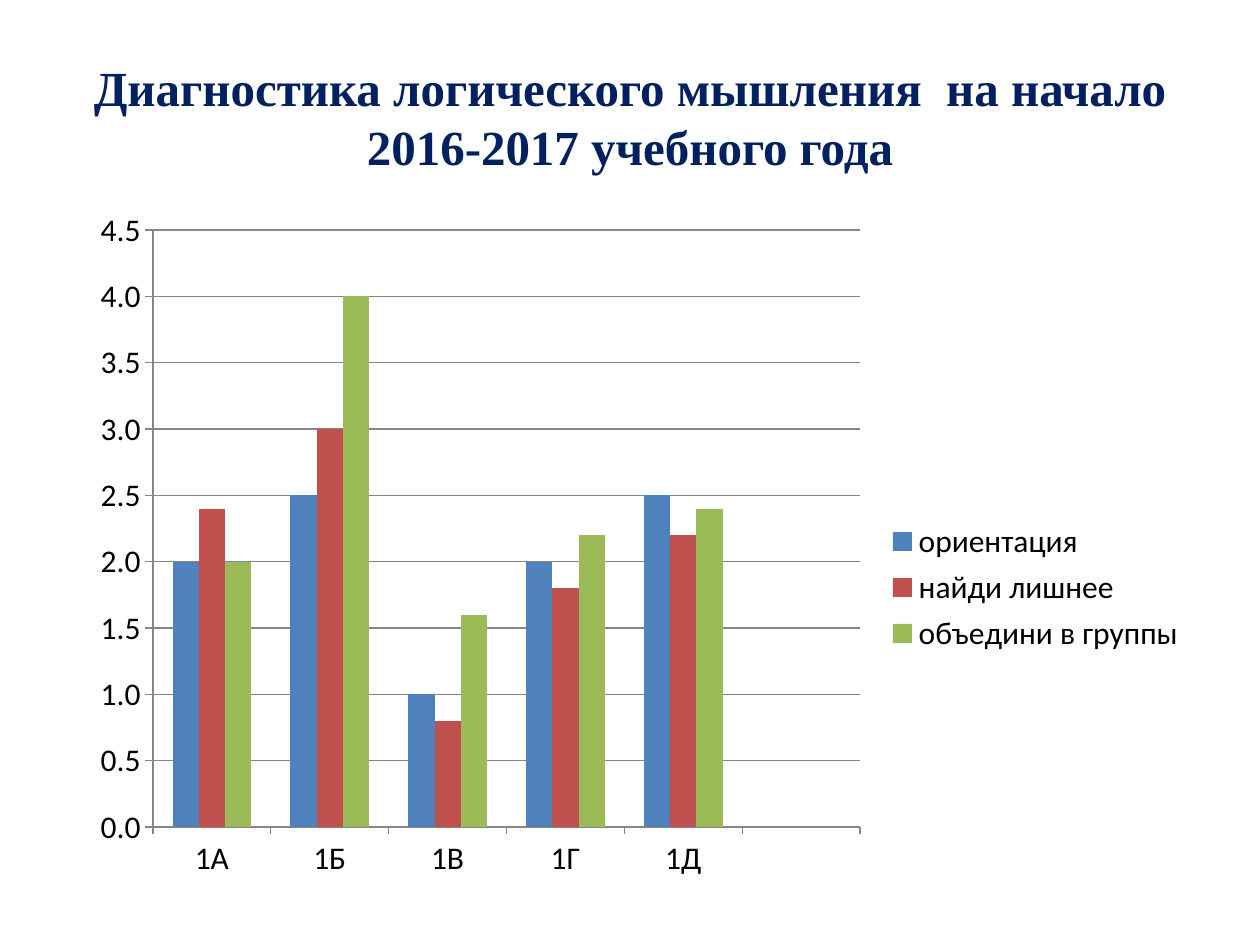
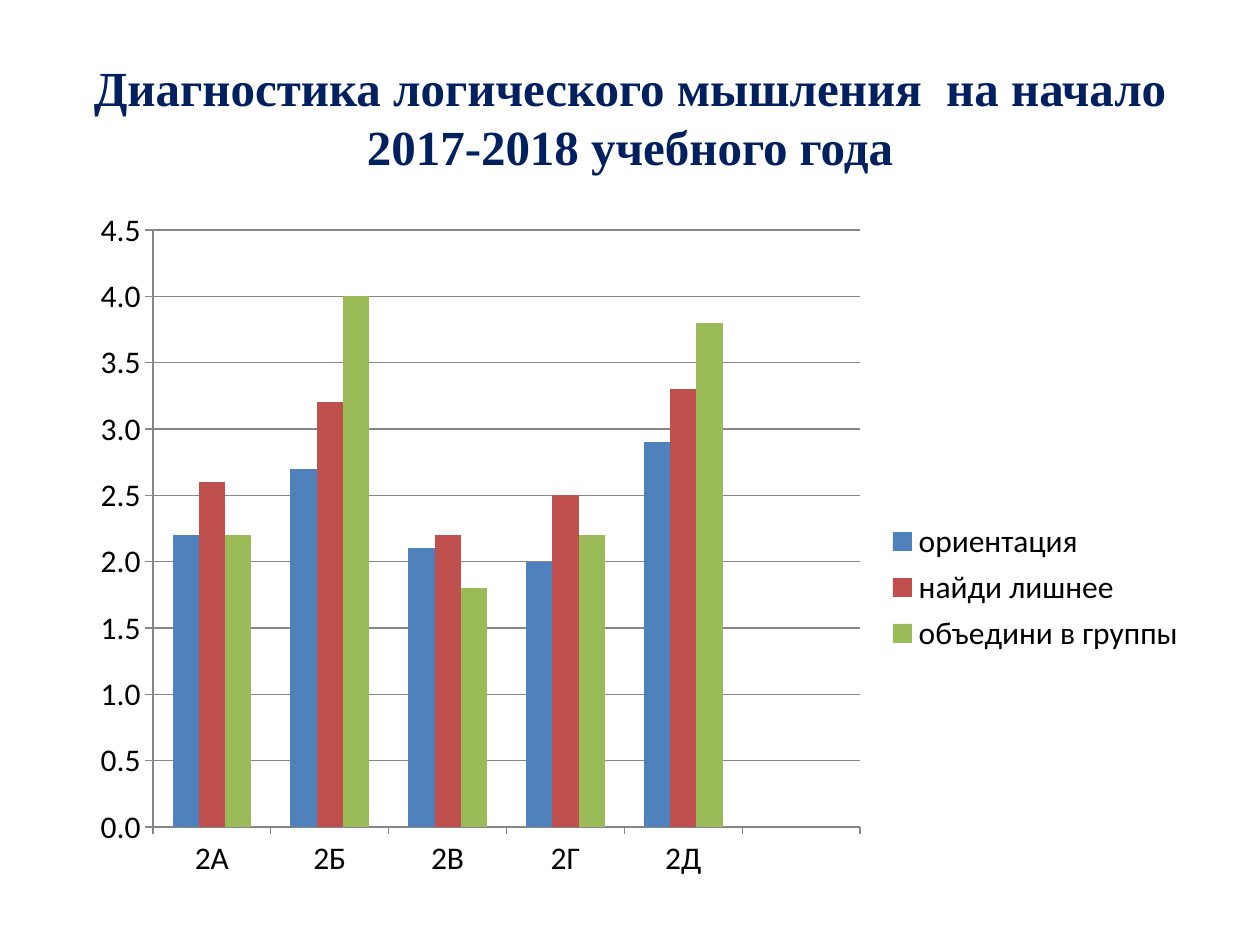
from pptx import Presentation
from pptx.chart.data import CategoryChartData
from pptx.dml.color import RGBColor
from pptx.enum.chart import XL_CHART_TYPE as ChartType, XL_LEGEND_POSITION as LegendPosition
from pptx.enum.chart import XL_TICK_MARK as TickMark
from pptx.enum.text import MSO_ANCHOR as Anchor, PP_ALIGN as Align
from pptx.oxml import parse_xml
from pptx.oxml.ns import nsdecls
from pptx.util import Inches, Pt

# Content: the last category is left empty on both slides
TITLE = "Диагностика логического мышления  на начало {} учебного года"
TESTS = ["ориентация", "найди лишнее", "объедини в группы"]
YEARS = [
    ("2016-2017", ["1А", "1Б", "1В", "1Г", "1Д", ""], [
        (2, 2.5, 1, 2, 2.5, None),
        (2.4, 3, 0.8, 1.8, 2.2, None),
        (2, 4, 1.6, 2.2, 2.4, None),
    ]),
    ("2017-2018", ["2А", "2Б", "2В", "2Г", "2Д", ""], [
        (2.2, 2.7, 2.1, 2, 2.9, None),
        (2.6, 3.2, 2.2, 2.5, 3.3, None),
        (2.2, 4, 1.8, 2.2, 3.8, None),
    ]),
]

# Shared style
NAVY = RGBColor(0x00, 0x20, 0x60)
BLACK = RGBColor(0x00, 0x00, 0x00)
GRAY = RGBColor(0x86, 0x86, 0x86)
TEST_COLORS = [
    RGBColor(0x4F, 0x81, 0xBD),
    RGBColor(0xC0, 0x50, 0x4D),
    RGBColor(0x9B, 0xBB, 0x59),
]
TITLE_BOX = [Inches(n) for n in (0.5, 0.3, 9, 1.25)]
CHART_BOX = [Inches(n) for n in (0.59, 1.55, 8.91, 5.51)]

# Left, top, width and height as shares of the chart
PLOT_AREA = (0.07, 0.05, 0.63, 0.86)
LEGEND_AREA = (0.73, 0.46, 0.26, 0.21)


def layout_xml(area, inner=False):
    target = '<c:layoutTarget val="inner"/>' if inner else ""
    modes = '<c:xMode val="edge"/><c:yMode val="edge"/>'
    sizes = "".join(f'<c:{side} val="{share}"/>' for side, share in zip("xywh", area))
    return parse_xml(
        f'<c:layout {nsdecls("c")}><c:manualLayout>{target}{modes}{sizes}'
        "</c:manualLayout></c:layout>"
    )


def place_parts(chart):
    plot_area = chart.plots[0]._element.getparent()
    legend = chart.legend._element
    for parent in (plot_area, legend):
        for layout in parent.xpath("c:layout"):
            parent.remove(layout)
    plot_area.insert(0, layout_xml(PLOT_AREA, inner=True))
    legend.xpath("c:legendPos")[0].addnext(layout_xml(LEGEND_AREA))


def add_title(slide, text):
    title = slide.shapes.title
    title.left, title.top, title.width, title.height = TITLE_BOX
    frame = title.text_frame
    frame.vertical_anchor = Anchor.MIDDLE
    frame.word_wrap = True
    paragraph = frame.paragraphs[0]
    paragraph.alignment = Align.CENTER
    run = paragraph.add_run()
    run.text = text
    run.font.name = "Times New Roman"
    run.font.size = Pt(28)
    run.font.bold = True
    run.font.color.rgb = NAVY


def add_scores_chart(slide, classes, scores):
    data = CategoryChartData(number_format="General")
    data.categories = classes
    for test, values in zip(TESTS, scores):
        data.add_series(test, values)
    chart = slide.shapes.add_chart(ChartType.COLUMN_CLUSTERED, *CHART_BOX, data).chart
    chart.has_title = False
    chart.font.name = "Calibri"
    chart.font.size = Pt(18)
    chart.font.color.rgb = BLACK

    # Columns
    plot = chart.plots[0]
    plot.gap_width = 150
    plot.overlap = 0
    plot.vary_by_categories = False
    for series, color in zip(plot.series, TEST_COLORS):
        series.format.fill.solid()
        series.format.fill.fore_color.rgb = color

    # Axes and gridlines
    value_axis = chart.value_axis
    value_axis.minimum_scale = 0
    value_axis.maximum_scale = 4.5
    value_axis.major_unit = 0.5
    value_axis.has_major_gridlines = True
    value_axis.tick_labels.number_format = "0.0"
    value_axis.tick_labels.number_format_is_linked = False
    for axis in (value_axis, chart.category_axis):
        axis.major_tick_mark = TickMark.OUTSIDE
        axis.minor_tick_mark = TickMark.NONE
    for part in (value_axis, chart.category_axis, value_axis.major_gridlines):
        part.format.line.color.rgb = GRAY
        part.format.line.width = Pt(0.75)

    # Legend
    chart.has_legend = True
    chart.legend.position = LegendPosition.RIGHT
    chart.legend.include_in_layout = False
    place_parts(chart)


def main():
    presentation = Presentation()
    presentation.slide_width = Inches(10)
    presentation.slide_height = Inches(7.5)
    title_only = presentation.slide_layouts[5]
    for year, classes, scores in YEARS:
        slide = presentation.slides.add_slide(title_only)
        add_title(slide, TITLE.format(year))
        add_scores_chart(slide, classes, scores)
    presentation.save("out.pptx")


if __name__ == "__main__":
    main()
